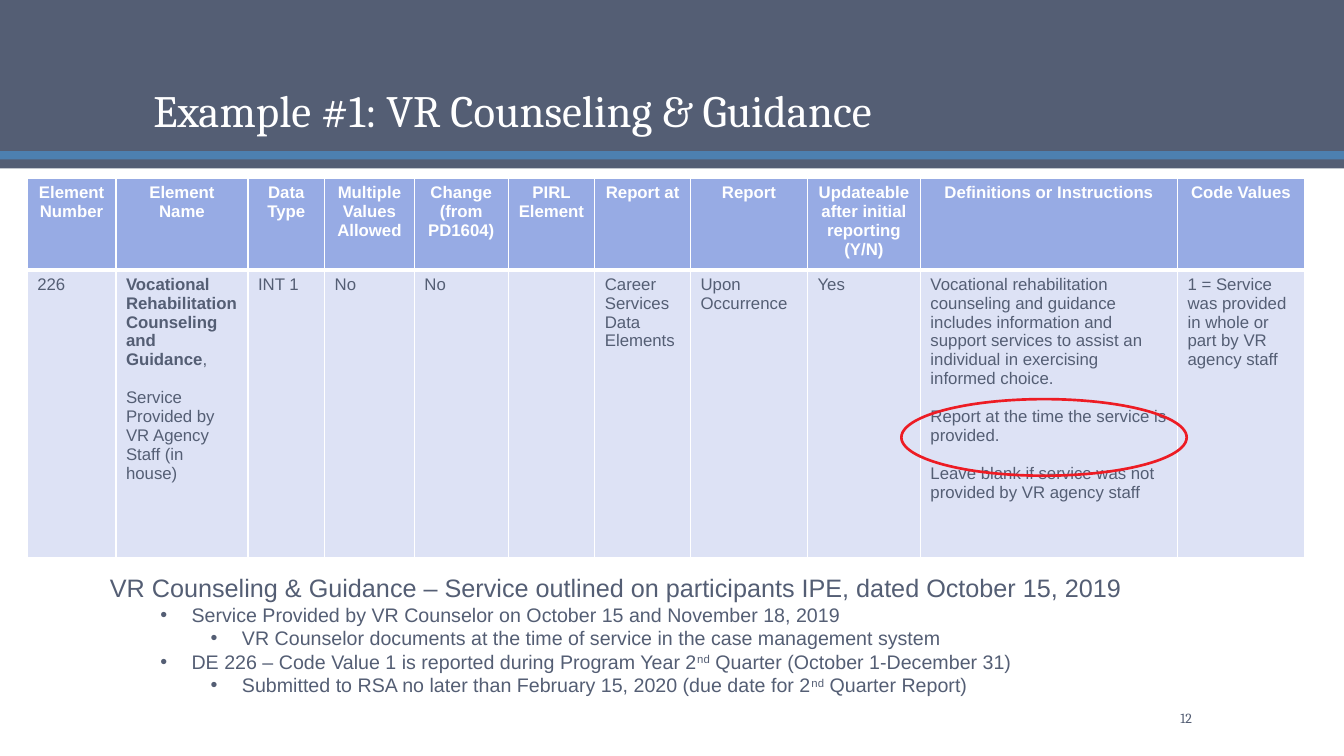
from pptx import Presentation
from pptx.dml.color import RGBColor
from pptx.enum.shapes import MSO_SHAPE as SHAPE
from pptx.enum.text import MSO_ANCHOR as ANCHOR, MSO_AUTO_SIZE as AUTO, PP_ALIGN as ALIGN
from pptx.oxml.ns import qn
from pptx.util import Inches, Pt
from lxml.etree import SubElement

SLATE = RGBColor(0x54, 0x5E, 0x74)
BLUE = RGBColor(0x4D, 0x80, 0xB0)
HEADER = RGBColor(0x97, 0xAB, 0xE4)
PALE = RGBColor(0xDD, 0xE2, 0xF5)
RED = RGBColor(0xED, 0x1C, 0x24)
WHITE = RGBColor(0xFF, 0xFF, 0xFF)

COLUMNS = [
    (0.88, "Element Number", ["226"]),
    (1.31, "Element Name",
     [[("Vocational Rehabilitation Counseling and Guidance", {"bold": True}), ","],
      "Service Provided by VR Agency Staff (in house)"]),
    (0.76, "Data Type", ["INT 1"]),
    (0.89, "Multiple Values Allowed", ["No"]),
    (0.93, "Change (from PD1604)", ["No"]),
    (0.86, "PIRL Element", [""]),
    (0.95, "Report at", ["Career Services Data Elements"]),
    (1.16, "Report", ["Upon Occurrence"]),
    (1.12, "Updateable after initial reporting (Y/N)", ["Yes"]),
    (2.55, "Definitions or Instructions",
     ["Vocational rehabilitation counseling and guidance includes information and "
      "support services to assist an individual in exercising informed choice.",
      "Report at the time the service is provided.",
      "Leave blank if service was not provided by VR agency staff"]),
    (1.26, "Code Values",
     ["1 = Service was provided in whole or part by VR agency staff"]),
]

ND = ("nd", {"raised": True})
NOTES = [
    (0, "VR Counseling & Guidance – Service outlined on participants IPE, dated October 15, 2019"),
    (1, "Service Provided by VR Counselor on October 15 and November 18, 2019"),
    (2, "VR Counselor documents at the time of service in the case management system"),
    (1, ["DE 226 – Code Value 1 is reported during Program Year 2", ND,
         " Quarter (October 1-December 31)"]),
    (2, ["Submitted to RSA no later than February 15, 2020 (due date for 2", ND,
         " Quarter Report)"]),
]


def write(p, text, font="Arial", size=12, color=SLATE, bold=False,
          align=ALIGN.LEFT, before=0, spacing=1.0):
    p.alignment, p.line_spacing, p.space_before = align, spacing, Pt(before)
    for part in [text] if isinstance(text, str) else text:
        words, extra = (part, {}) if isinstance(part, str) else part
        r = p.add_run()
        r.text = words
        f = r.font
        f.name, f.size, f.bold = font, Pt(size), extra.get("bold", bold)
        f.color.rgb = color
        if extra.get("raised"):
            r._r.get_or_add_rPr().set("baseline", "30000")


def place(sp, box):
    sp.left, sp.top, sp.width, sp.height = (Inches(v) for v in box)


def add_heading(s, box):
    x, y, w, h = box
    title = s.shapes.title
    for top, height, color in ((0, 1.5, SLATE), (1.5, 0.09, BLUE), (1.58, 0.09, SLATE)):
        band = s.shapes.add_shape(SHAPE.RECTANGLE, Inches(x), Inches(y + top),
                                  Inches(w), Inches(height))
        band.shadow.inherit = False
        band.fill.solid()
        band.fill.fore_color.rgb = color
        band.line.fill.background()
        title._element.addprevious(band._element)
    place(title, (x + 1.42, y + 0.28, 10.5, 1.13))
    tf = title.text_frame
    tf.auto_size, tf.vertical_anchor = AUTO.NONE, ANCHOR.BOTTOM
    write(tf.paragraphs[0], "Example #1: VR Counseling & Guidance",
          font="Cambria", size=32, color=WHITE, spacing=0.9)


def format_cell(cell, color, top, bottom):
    tcPr = cell._tc.get_or_add_tcPr()
    for side, width in (("L", 1), ("R", 1), ("T", top), ("B", bottom)):
        ln = SubElement(tcPr, qn("a:ln" + side), w=str(Pt(width)))
        fill = SubElement(ln, qn("a:solidFill"))
        SubElement(fill, qn("a:srgbClr"), val=str(WHITE))
    cell.fill.solid()
    cell.fill.fore_color.rgb = color


def add_elements(s, box):
    x, y, w, h = box
    table = s.shapes.add_table(2, len(COLUMNS), *(Inches(v) for v in box)).table
    table.horz_banding = False
    table.rows[0].height, table.rows[1].height = Inches(0.91), Inches(h - 0.91)
    for i, (width, name, paragraphs) in enumerate(COLUMNS):
        table.columns[i].width = Inches(width)
        head, body = table.cell(0, i), table.cell(1, i)
        format_cell(head, HEADER, 1, 3)
        format_cell(body, PALE, 3, 1)
        write(head.text_frame.paragraphs[0], name, color=WHITE, bold=True, align=ALIGN.CENTER)
        tf = body.text_frame
        for j, text in enumerate(paragraphs):
            p = tf.add_paragraph() if j else tf.paragraphs[0]
            write(p, text, before=13.8 if j else 0)
    ring = s.shapes.add_shape(SHAPE.OVAL, Inches(x + 8.67), Inches(y + 2.19),
                              Inches(2.83), Inches(0.76))
    ring.shadow.inherit = False
    ring.fill.background()
    ring.line.color.rgb = RED
    ring.line.width = Pt(1.89)


def add_notes(s, box):
    body = s.placeholders[1]
    place(body, box)
    tf = body.text_frame
    tf.auto_size, tf.vertical_anchor = AUTO.SHAPE_TO_FIT_TEXT, ANCHOR.TOP
    for i, (level, text) in enumerate(NOTES):
        p = tf.add_paragraph() if i else tf.paragraphs[0]
        p.level = level
        write(p, text, size=14 if level else 18)
        pPr = p._p.get_or_add_pPr()
        pPr.set("marL", str(Inches(0.31 + 0.5 * level) if level else 0))
        pPr.set("indent", str(Inches(-0.31) if level else 0))
        if level:
            SubElement(pPr, qn("a:buChar"), char="•")
        else:
            SubElement(pPr, qn("a:buNone"))


def add_number(s, box):
    tf = s.shapes.add_textbox(*(Inches(v) for v in box)).text_frame
    tf.word_wrap, tf.vertical_anchor = True, ANCHOR.MIDDLE
    write(tf.paragraphs[0], "12", font="Cambria", size=10, align=ALIGN.RIGHT)


def main():
    prs = Presentation()
    prs.slide_width, prs.slide_height = Inches(13.33), Inches(7.5)
    s = prs.slides.add_slide(prs.slide_layouts[1])
    add_heading(s, (0, 0, 13.33, 1.67))
    add_elements(s, (0.27, 1.77, 12.68, 3.76))
    add_notes(s, (0.99, 5.63, 11.16, 1.35))
    add_number(s, (10.42, 6.97, 1.5, 0.3))
    prs.save("out.pptx")


if __name__ == "__main__":
    main()
